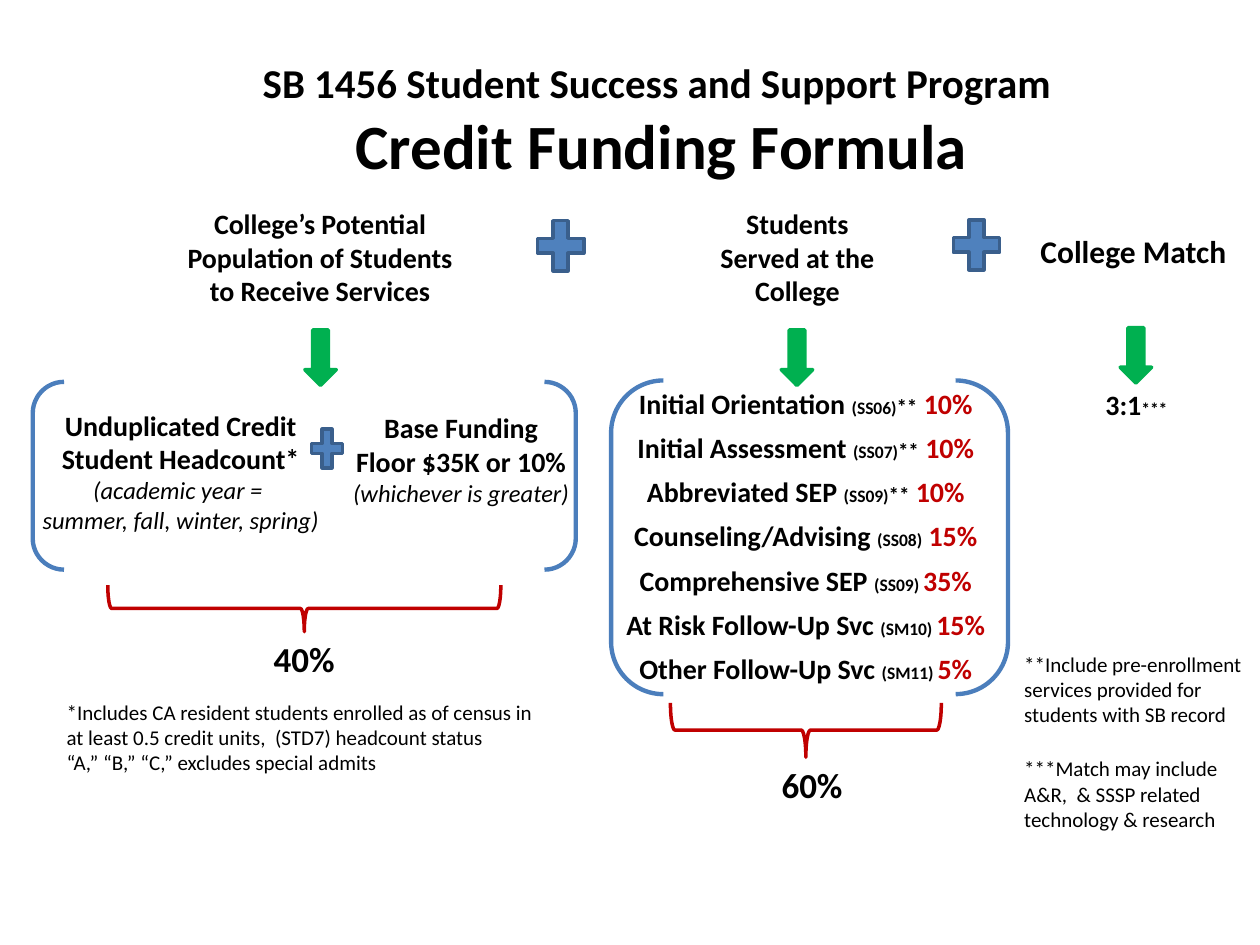
from pptx import Presentation
from pptx.dml.color import RGBColor
from pptx.enum.shapes import MSO_SHAPE
from pptx.enum.text import MSO_ANCHOR, MSO_AUTO_SIZE, PP_ALIGN
from pptx.util import Pt

PLUS, ARROW = MSO_SHAPE.MATH_PLUS, MSO_SHAPE.DOWN_ARROW
BRACKETS, BRACE = MSO_SHAPE.DOUBLE_BRACKET, MSO_SHAPE.LEFT_BRACE
CENTER, LEFT = PP_ALIGN.CENTER, PP_ALIGN.LEFT

FONT = "Calibri"
BLACK = RGBColor(0x00, 0x00, 0x00)
RED = RGBColor(0xC0, 0x00, 0x00)
GREEN = RGBColor(0x00, 0xB0, 0x50)
BLUE = RGBColor(0x4F, 0x81, 0xBD)
DARK_BLUE = RGBColor(0x3A, 0x5F, 0x8C)
BRACKET_BLUE = RGBColor(0x4B, 0x7E, 0xBC)

# A run is (text, size, style, colour); style holds "b" and/or "i".
TITLE = [("SB 1456 Student Success and Support Program ", 23.4, "b", BLACK),
         ("Credit Funding Formula", 36, "b", BLACK)]

# name, code, mark, share
SERVICES = [
    ("Initial Orientation ", "(SS06)", "**", "10%"),
    ("Initial Assessment ", "(SS07)", "**", "10%"),
    ("Abbreviated SEP ", "(SS09)", "**", "10%"),
    ("Counseling/Advising ", "(SS08)", "", "15%"),
    ("Comprehensive SEP ", "(SS09) ", "", "35%"),
    ("At Risk Follow-Up Svc ", "(SM10) ", "", "15%"),
    ("Other Follow-Up Svc ", "(SM11) ", "", "5%"),
]

# (left, top, width, height), wrap, [(text, size, style), ...] one per paragraph
CENTERED_TEXTS = [
    ((95.8, 114.5, 174.2, 65.5), True,
     [("College’s Potential Population of Students to Receive Services", 16, "b")]),
    ((404.6, 114.5, 102.2, 65.5), True, [("Students Served at the College", 16, "b")]),
    ((586.8, 128.9, 121.7, 51), False, [("College Match", 18, "b")]),
    ((7.2, 229.7, 192.2, 80), True,
     [("Unduplicated Credit Student Headcount*", 16, "b"),
      ("(academic year = ", 14, "i"),
      ("summer, fall, winter, spring)", 14, "i")]),
    ((191.5, 231.1, 144, 63.4), True,
     [("Base Funding", 16, "b"),
      ("Floor $35K or 10%", 16, "b"),
      ("(whichever is greater)", 14, "i")]),
    ((149, 360.7, 49.7, 31.7), False, [("40%", 20, "b")]),
    ((439.2, 432.7, 49.7, 31.7), False, [("60%", 20, "b")]),
]

FOOTNOTES = [
    ((31, 396, 283.7, 51),
     ["*Includes CA resident students enrolled as of census in at least 0.5 "
      "credit units,  (STD7) headcount status",
      "“A,” “B,” “C,” excludes special admits"]),
    ((578.2, 368.6, 155.5, 51),
     ["**Include pre-enrollment services provided for students with SB record"]),
    ((578.2, 428.4, 129.6, 51),
     ["***Match may include A&R,  & SSSP related technology & research"]),
]

MATCH_BOX = (624.2, 218.2, 50.4, 26.6)
MATCH_RATIO = [("3:1", 16, "b", BLACK), ("***", 10, "b", BLACK)]
SERVICES_BOX = (347, 217.4, 226.8, 179.3)

# kind, places, fill, line colour, line width, rotation
SYMBOLS = [
    (PLUS, [(302.4, 121, 36, 38.9), (540, 120.5, 36, 38.9), (175, 241.2, 23.8, 30.2)],
     BLUE, DARK_BLUE, 2, 0),
    (ARROW, [(174.2, 188.6, 18, 31.7), (446.4, 188.6, 18, 31.7), (640.1, 187.2, 18, 31.7)],
     GREEN, GREEN, 2, 0),
    (BRACKETS, [(18.7, 218.2, 310.3, 107.3), (349.2, 217.4, 226.8, 179.3)],
     None, BRACKET_BLUE, 2.5, 0),
    (BRACE, [(160.6, 235.4, 26.6, 224.6), (445, 339.8, 31, 154.8)],
     None, RED, 2, 270),
]


def points(box):
    return [Pt(value) for value in box]


def add_run(paragraph, text, size, style, color):
    run = paragraph.add_run()
    run.text = text
    run.font.name = FONT
    run.font.size = Pt(size)
    run.font.bold = "b" in style
    run.font.italic = "i" in style
    run.font.color.rgb = color


def add_text(slide, box, paragraphs, alignment=CENTER, wrap=True, space_after=0):
    """Add a text box; each paragraph is a list of runs."""
    frame = slide.shapes.add_textbox(*points(box)).text_frame
    frame.word_wrap = wrap
    frame.auto_size = MSO_AUTO_SIZE.SHAPE_TO_FIT_TEXT
    for index, runs in enumerate(paragraphs):
        paragraph = frame.add_paragraph() if index else frame.paragraphs[0]
        paragraph.alignment = alignment
        paragraph.space_after = Pt(space_after)
        for run in runs:
            add_run(paragraph, *run)


def add_symbol(slide, kind, box, fill, line, width, rotation):
    shape = slide.shapes.add_shape(kind, *points(box))
    shape.shadow.inherit = False
    shape.rotation = rotation
    if fill is None:
        shape.fill.background()
    else:
        shape.fill.solid()
        shape.fill.fore_color.rgb = fill
    shape.line.color.rgb = line
    shape.line.width = Pt(width)


def fill_title(slide):
    title = slide.shapes.title
    title.left, title.top, title.width, title.height = points((72, 29.5, 612, 77.8))
    frame = title.text_frame
    frame.vertical_anchor = MSO_ANCHOR.MIDDLE
    frame.auto_size = MSO_AUTO_SIZE.NONE
    paragraph = frame.paragraphs[0]
    paragraph.alignment = CENTER
    heading, subject = TITLE
    add_run(paragraph, *heading)
    paragraph.add_line_break()
    add_run(paragraph, *subject)


def service_runs(name, code, mark, share):
    runs = [(name, 16, "b", BLACK), (code, 10, "b", BLACK)]
    if mark:
        runs.append((mark, 12, "b", BLACK))
    if not code.endswith(" "):
        runs.append((" ", 16, "b", BLACK))
    return runs + [(share, 16, "b", RED)]


def main():
    presentation = Presentation()
    presentation.slide_width, presentation.slide_height = Pt(720), Pt(540)
    slide = presentation.slides.add_slide(presentation.slide_layouts[0])
    subtitle = slide.placeholders[1].element
    subtitle.getparent().remove(subtitle)
    fill_title(slide)

    for kind, boxes, *look in SYMBOLS:
        for box in boxes:
            add_symbol(slide, kind, box, *look)

    for box, wrap, lines in CENTERED_TEXTS:
        add_text(slide, box, [[(*line, BLACK)] for line in lines], wrap=wrap)
    for box, lines in FOOTNOTES:
        add_text(slide, box, [[(line, 12, "", BLACK)] for line in lines], LEFT)
    add_text(slide, MATCH_BOX, [MATCH_RATIO], wrap=False)
    add_text(slide, SERVICES_BOX, [service_runs(*service) for service in SERVICES],
             wrap=False, space_after=6)

    presentation.save("out.pptx")


if __name__ == "__main__":
    main()
